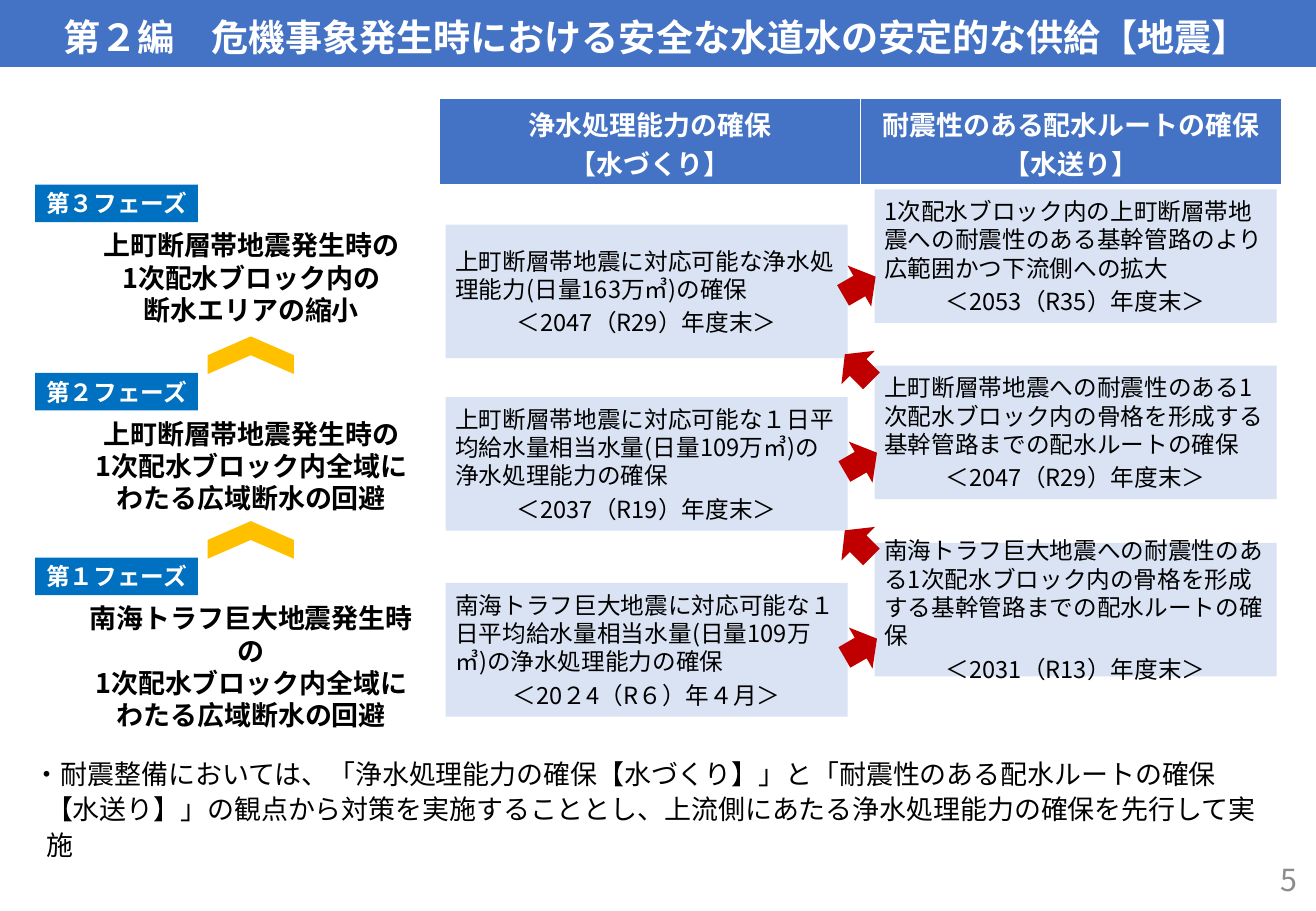
import pptx
import pptx.util
import pptx.dml.color
import pptx.enum.shapes
import pptx.enum.text
import lxml.etree

Pt = pptx.util.Pt
SHAPE = pptx.enum.shapes.MSO_SHAPE
ALIGN = pptx.enum.text.PP_ALIGN
ANCHOR = pptx.enum.text.MSO_ANCHOR
FONT = "Noto Sans CJK JP"
EAST_ASIAN = "{http://schemas.openxmlformats.org/drawingml/2006/main}ea"


def add_block(kind, left, top, width, height, color, rotation=0):
    shape = slide.shapes.add_shape(kind, Pt(left), Pt(top), Pt(width), Pt(height))
    shape.shadow.inherit = False
    shape.fill.solid()
    shape.fill.fore_color.rgb = pptx.dml.color.RGBColor.from_string(color)
    shape.line.fill.background()
    shape.rotation = rotation
    return shape


def write(frame, lines, size, color="000000", bold=False, alignment=ALIGN.CENTER):
    frame.word_wrap = True
    for index, line in enumerate(lines):
        paragraph = frame.add_paragraph() if index else frame.paragraphs[0]
        paragraph.alignment = alignment
        run = paragraph.add_run()
        run.text = line
        run.font.name = FONT
        run.font.size = Pt(size)
        run.font.bold = bold
        run.font.color.rgb = pptx.dml.color.RGBColor.from_string(color)
        properties = run.font._element
        lxml.etree.SubElement(properties, EAST_ASIAN).set("typeface", FONT)


presentation = pptx.Presentation()
presentation.slide_width = Pt(780)
presentation.slide_height = Pt(540)
slide = presentation.slides.add_slide(presentation.slide_layouts[5])

title = slide.shapes.title
band = add_block(SHAPE.RECTANGLE, 0, 0, 780, 39.6, "4472C4")
title.element.addprevious(band.element)
title.left, title.top, title.width, title.height = Pt(21.6), Pt(2.2), Pt(734.4), Pt(33.8)
write(title.text_frame, ["第２編\u3000危機事象発生時における安全な水道水の安定的な供給【地震】"], 22, "FFFFFF", True)
title.text_frame.auto_size = pptx.enum.text.MSO_AUTO_SIZE.NONE
title.text_frame.vertical_anchor = ANCHOR.MIDDLE
title.text_frame.margin_top = Pt(8.6)
title.text_frame.margin_bottom = 0
title.text_frame.paragraphs[0].line_spacing = 0.9

phases = [
    (109.4, "第３フェーズ", ["上町断層帯地震発生時の", "1次配水ブロック内の", "断水エリアの縮小"]),
    (221, "第２フェーズ", ["上町断層帯地震発生時の", "1次配水ブロック内全域に", "わたる広域断水の回避"]),
    (330.5, "第１フェーズ", ["南海トラフ巨大地震発生時の", "1次配水ブロック内全域に", "わたる広域断水の回避"]),
]
for index, (top, phase, goal) in enumerate(phases):
    tag = add_block(SHAPE.RECTANGLE, 20.9, top, 96.5, 22.3, "0070C0")
    tag.text_frame.margin_left = tag.text_frame.margin_right = Pt(2.9)
    tag.text_frame.vertical_anchor = ANCHOR.MIDDLE
    write(tag.text_frame, [phase], 14, "FFFFFF", True)
    goal_box = slide.shapes.add_textbox(Pt(38.9), Pt(top + 22.7), Pt(220.3), Pt(65.5))
    write(goal_box.text_frame, goal, 16, bold=True)
    if index:
        add_block(SHAPE.CHEVRON, 137.5, top - 36, 22.3, 51.1, "FFC000", 270)

table = slide.shapes.add_table(1, 2, Pt(260.6), Pt(58.3), Pt(499), Pt(51.1)).table
headings = [["浄水処理能力の確保", "【水づくり】"], ["耐震性のある配水ルートの確保", "【水送り】"]]
for cell, heading in zip(table.iter_cells(), headings):
    cell.fill.solid()
    cell.fill.fore_color.rgb = pptx.dml.color.RGBColor.from_string("4472C4")
    cell.vertical_anchor = ANCHOR.MIDDLE
    cell.margin_left = cell.margin_right = Pt(11.5)
    write(cell.text_frame, heading, 16, "FFFFFF", True)

measures = [
    (518.4, 112.3, "1次配水ブロック内の上町断層帯地震への耐震性のある基幹管路のより広範囲かつ下流側への拡大", "＜2053（R35）年度末＞"),
    (264.2, 133.2, "上町断層帯地震に対応可能な浄水処理能力(日量163万㎥)の確保", "＜2047（R29）年度末＞"),
    (518.4, 216.7, "上町断層帯地震への耐震性のある1次配水ブロック内の骨格を形成する基幹管路までの配水ルートの確保", "＜2047（R29）年度末＞"),
    (264.2, 235.4, "上町断層帯地震に対応可能な１日平均給水量相当水量(日量109万㎥)の浄水処理能力の確保", "＜2037（R19）年度末＞"),
    (518.4, 321.8, "南海トラフ巨大地震への耐震性のある1次配水ブロック内の骨格を形成する基幹管路までの配水ルートの確保", "＜2031（R13）年度末＞"),
    (264.2, 345.6, "南海トラフ巨大地震に対応可能な１日平均給水量相当水量(日量109万㎥)の浄水処理能力の確保", "＜20２4（R６）年４月＞"),
]
for left, top, measure, deadline in measures:
    box = add_block(SHAPE.RECTANGLE, left, top, 238.3, 79.2, "DAE3F3")
    frame = box.text_frame
    frame.margin_left = frame.margin_right = Pt(5.7)
    frame.vertical_anchor = ANCHOR.MIDDLE
    write(frame, [measure, deadline], 14)
    frame.paragraphs[0].alignment = ALIGN.LEFT
    for paragraph in frame.paragraphs:
        paragraph.space_after = Pt(3)

note = slide.shapes.add_textbox(Pt(13), Pt(443.5), Pt(745.9), Pt(49.7))
write(note.text_frame, ["・耐震整備においては、「浄水処理能力の確保【水づくり】」と「耐震性のある配水ルートの確保【水送り】」の観点から対策を実施することとし、上流側にあたる浄水処理能力の確保を先行して実施"], 16, alignment=ALIGN.LEFT)
note_paragraph = note.text_frame.paragraphs[0]
note_paragraph.line_spacing = 1.1
note_properties = note_paragraph._p.get_or_add_pPr()
note_properties.set("marL", str(Pt(7.2)))
note_properties.set("indent", str(-Pt(7.2)))

page_number = slide.shapes.add_textbox(Pt(600.5), Pt(506.9), Pt(175.7), Pt(28.8))
page_number.text_frame.vertical_anchor = ANCHOR.MIDDLE
write(page_number.text_frame, ["5"], 18, "8C8C8C", alignment=ALIGN.RIGHT)

arrows = [
    (498.2, 155.5, 330),
    (497.5, 203.8, 225),
    (499, 259.9, 330),
    (497.5, 308.2, 225),
    (499, 370.1, 330),
]
for left, top, rotation in arrows:
    add_block(SHAPE.RIGHT_ARROW, left, top, 22.3, 28.1, "C00000", rotation)

presentation.save("out.pptx")
